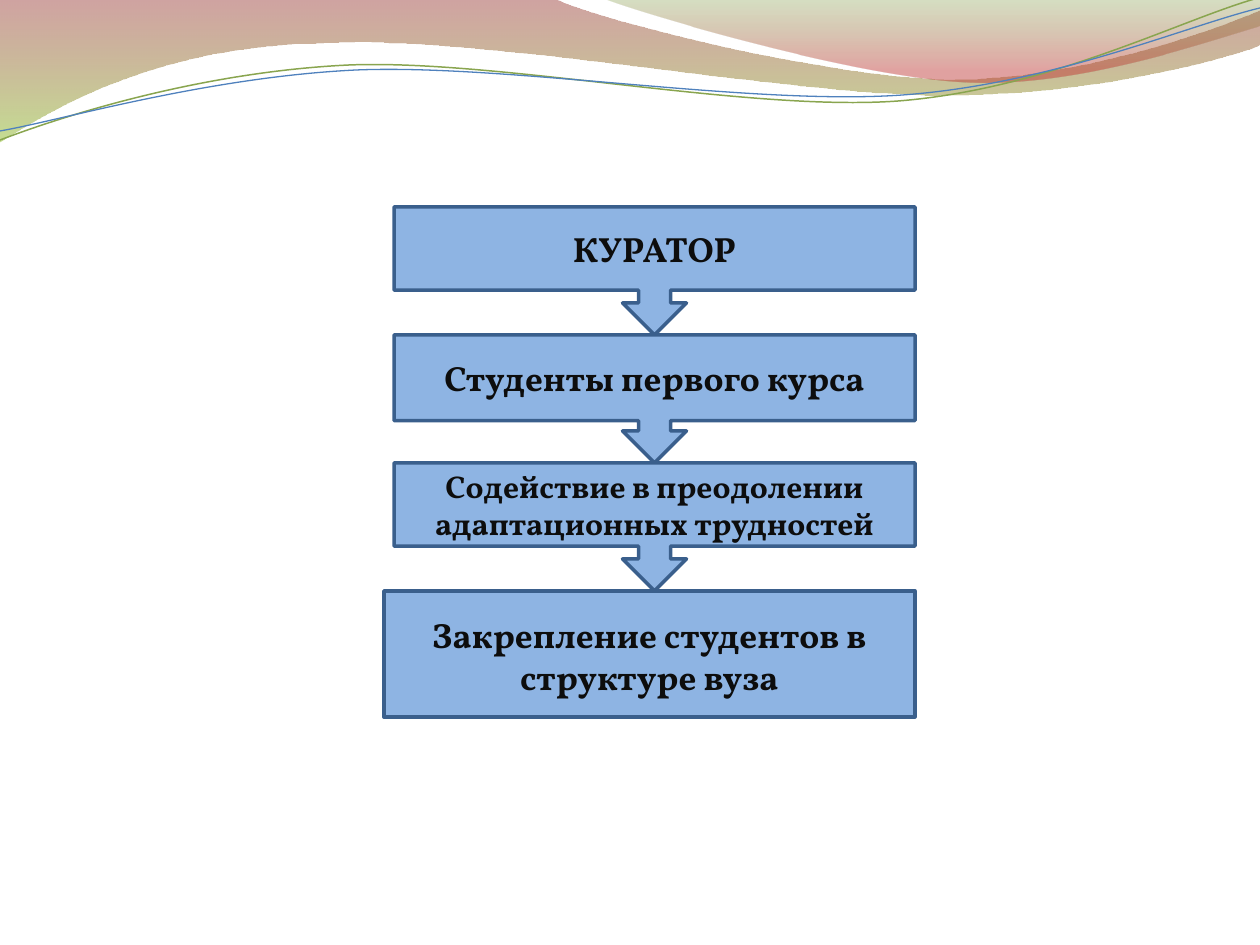
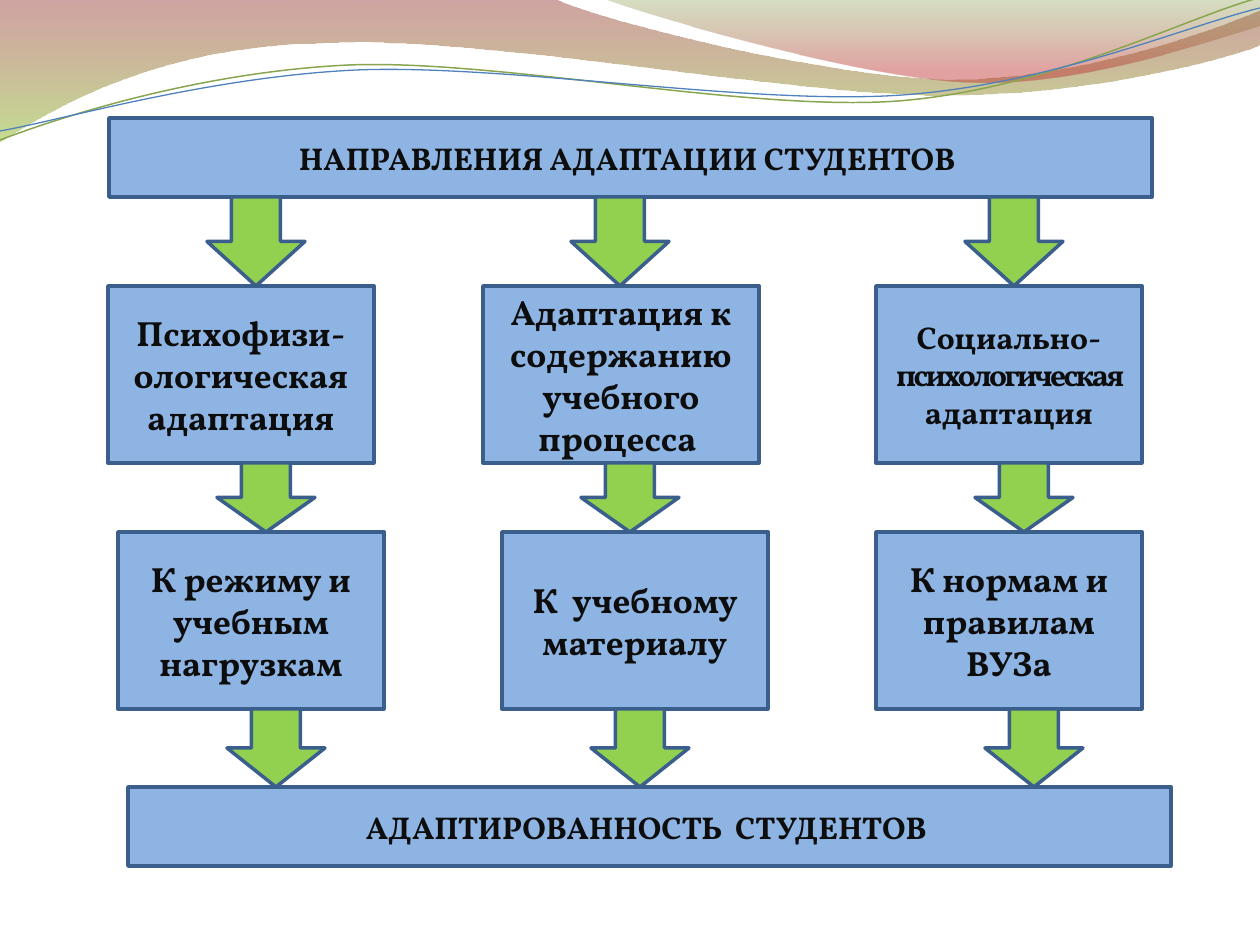
from lxml import etree
from pptx import Presentation, util as u
from pptx.dml.color import RGBColor
from pptx.enum import shapes, text
from pptx.oxml import parse_xml
from pptx.oxml.ns import nsdecls, qn

PX = 914400 / 126
WIDE, HIGH = 1260, 945
FONT = "Vollkorn"
BLUE, GREEN, EDGE, INK = "8EB4E3", "92D050", "3A5F8C", "0D0D0D"
KIND = shapes.MSO_SHAPE

FILLS = [
    ([(0, 0), (555, -1), (600, 21, 837, 79, 955, 79), (1075, 79, 1207, 33, 1260, 11),
      (1261, 45), (1239, 55, 1096, 96, 940, 95), (784, 95, 481, 35, 324, 43),
      (163, 45, 58, 105, -1, 142)],
     [(0, "973330", 45), (100, "95C238", 55)]),
    ([(604, -1), (641, 14, 859, 78, 969, 82), (1079, 87, 1211, 40, 1260, 26), (1260, 0)],
     [(0, "769537", 30), (80, "BE3330", 45)]),
]
LINES = [
    ([(0, 140), (60, 117, 199, 72, 349, 65), (498, 59, 747, 112, 898, 101),
      (1050, 89, 1182, 19, 1258, -2)], "89A54F", 0.85),
    ([(0, 131), (59, 121, 207, 77, 357, 70), (508, 64, 752, 106, 903, 95),
      (1053, 84, 1186, 26, 1260, 8)], "4F81BD", 0.75),
]

STEPS = [
    ("КУРАТОР", 20, 0.65),
    ("Студенты первого курса", 20, 0.67),
    ("Содействие в преодолении адаптационных трудностей", 18, 0.65),
]
GOAL = "Закрепление студентов в структуре вуза"

BARS = [
    ("НАПРАВЛЕНИЯ АДАПТАЦИИ СТУДЕНТОВ ", 109, 118),
    ("АДАПТИРОВАННОСТЬ  СТУДЕНТОВ ", 128, 787),
]
ROWS = [
    (286, [("Психофизи-ологическая адаптация", 108, 266, 20),
           ("Адаптация к содержанию учебного процесса ", 483, 276, 20),
           ([("Социально-", 0), ("психологическая ", -1.5), ("адаптация", 0)], 876, 266, 18)]),
    (532, [("К режиму и учебным нагрузкам", 118, 266, 20),
           ("К  учебному материалу", 502, 266, 20),
           ("К нормам и правилам ВУЗа", 876, 266, 20)]),
]
BAR_W, BAR_H, BOX_H = 1043, 79, 177
ARROWS, ARROW_W, SHIFT = (207, 571, 965), 98, 10


def px(num):
    return round(num * PX)


def color(code):
    return RGBColor.from_string(code)


def write(shape, words, size=20, top=6):
    frame = shape.text_frame
    frame.word_wrap = True
    frame.vertical_anchor = text.MSO_ANCHOR.MIDDLE
    frame.margin_top = px(top)
    para = frame.paragraphs[0]
    para.alignment = text.PP_ALIGN.CENTER
    for part, gap in [(words, 0)] if isinstance(words, str) else words:
        run = para.add_run()
        run.text = part
        font = run.font
        font.name, font.size, font.bold = FONT, u.Pt(size), True
        font.color.rgb = color(INK)
        if gap:
            run._r.get_or_add_rPr().set("spc", str(round(gap * 100)))


def block(slide, kind, left, top, width, height, fill=BLUE):
    shape = slide.shapes.add_shape(kind, px(left), px(top), px(width), px(height))
    shape.shadow.inherit = False
    shape.fill.solid()
    shape.fill.fore_color.rgb = color(fill)
    shape.line.color.rgb = color(EDGE)
    shape.line.width = u.Pt(2)
    return shape


def bend(shape, parts):
    """Join each run of three straight steps into one cubic curve."""
    steps = iter(shape._element.findall(".//" + qn("a:lnTo")))
    for part in parts:
        first = next(steps)
        if len(part) == 6:
            cubic = etree.Element(qn("a:cubicBezTo"))
            first.addprevious(cubic)
            for step in (first, next(steps), next(steps)):
                cubic.append(step[0])
                step.getparent().remove(step)


def wave(slide, master, curve, close):
    dots = [(px(part[i]), px(part[i + 1]))
            for part in curve for i in range(0, len(part), 2)]
    pen = slide.shapes.build_freeform(*dots[0], scale=1.0)
    pen.add_line_segments(dots[1:], close=close)
    shape = pen.convert_to_shape()
    shape.shadow.inherit = False
    bend(shape, curve[1:])
    master.shapes.element.append(shape._element)
    return shape


def blend(shape, stops):
    marks = "".join(
        f'<a:gs pos="{spot * 1000}"><a:srgbClr val="{code}">'
        f'<a:alpha val="{alpha * 1000}"/></a:srgbClr></a:gs>'
        for spot, code, alpha in stops)
    grad = parse_xml(f'<a:gradFill {nsdecls("a")} rotWithShape="1"><a:gsLst>{marks}</a:gsLst>'
                     '<a:lin ang="5400000" scaled="0"/></a:gradFill>')
    shape.fill.background()
    old = shape._element.spPr.find(qn("a:noFill"))
    old.getparent().replace(old, grad)
    shape.line.fill.background()


def dress(slide, master):
    for curve, stops in FILLS:
        blend(wave(slide, master, curve, True), stops)
    for curve, code, width in LINES:
        line = wave(slide, master, curve, False)
        line.fill.background()
        line.line.color.rgb = color(code)
        line.line.width = u.Pt(width)


def chain(slide):
    left, top, width, height = 394, 207, 521, 128
    for words, size, body in STEPS:
        box = block(slide, KIND.DOWN_ARROW_CALLOUT, left, top, width, height)
        box.adjustments[3] = body
        write(box, words, size=size)
        top += height
    write(block(slide, KIND.RECTANGLE, 384, top, 531, 126), GOAL, top=10)


def grid(slide):
    for words, left, top in BARS:
        write(block(slide, KIND.RECTANGLE, left, top, BAR_W, BAR_H), words, size=18)
    for top, cells in ROWS:
        for words, left, width, size in cells:
            write(block(slide, KIND.RECTANGLE, left, top, width, BOX_H), words, size=size)
    tops = [BARS[0][2] + BAR_H] + [top + BOX_H for top, _ in ROWS]
    ends = [top for top, _ in ROWS] + [BARS[1][2]]
    for row, (top, end) in enumerate(zip(tops, ends)):
        for left in ARROWS:
            block(slide, KIND.DOWN_ARROW, left + row * SHIFT, top,
                  ARROW_W, end - top, fill=GREEN)


def main():
    deck = Presentation()
    deck.slide_width, deck.slide_height = px(WIDE), px(HIGH)
    master, blank = deck.slide_master, deck.slide_layouts[6]
    for owner in (master, blank):
        for hole in list(owner.placeholders):
            hole._element.getparent().remove(hole._element)
    first, second = [deck.slides.add_slide(blank) for _ in range(2)]
    dress(first, master)
    chain(first)
    grid(second)
    deck.save("out.pptx")


if __name__ == "__main__":
    main()
